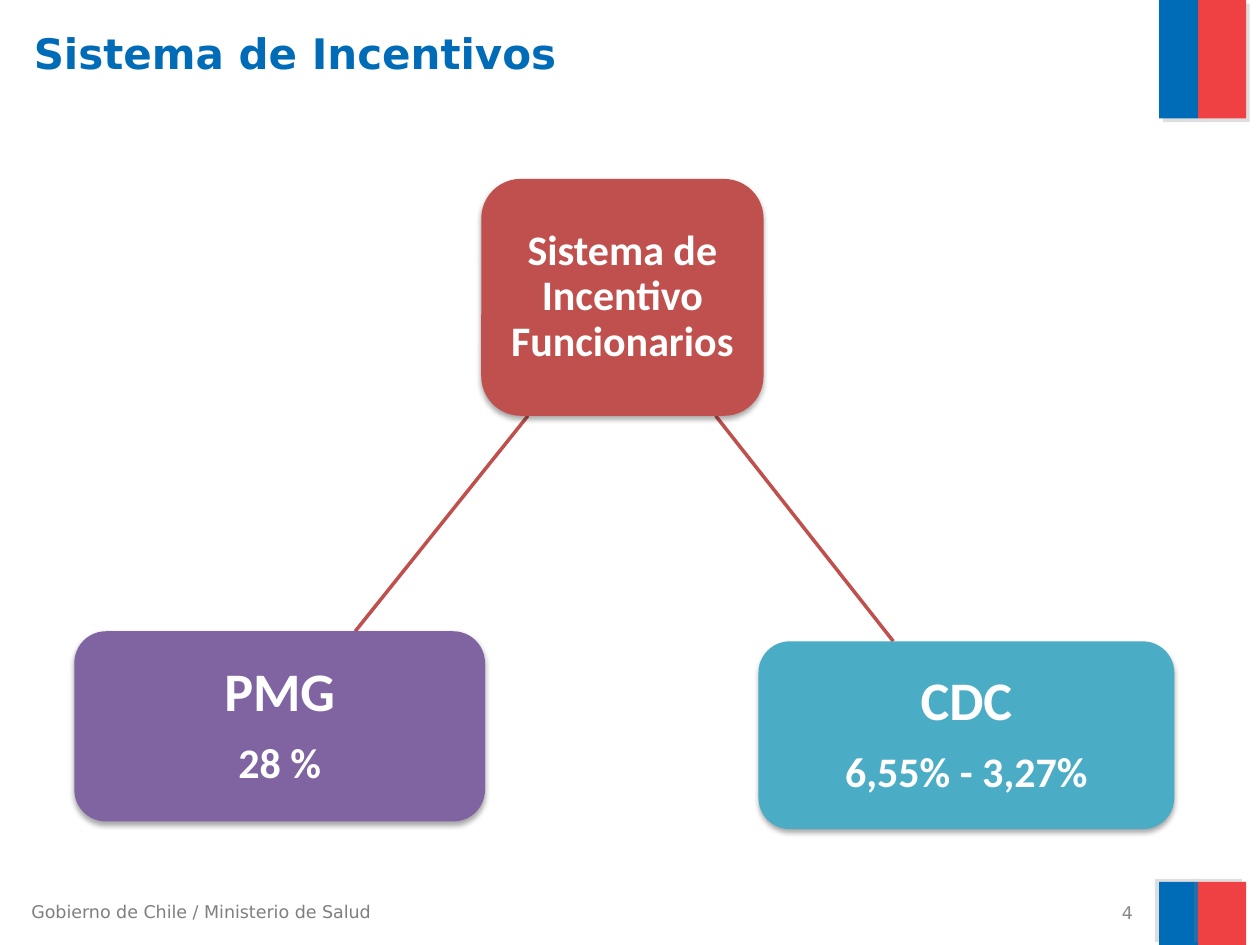
from dataclasses import dataclass

from lxml import etree
from pptx import Presentation
from pptx.dml.color import RGBColor
from pptx.enum.shapes import MSO_CONNECTOR, MSO_SHAPE
from pptx.enum.text import MSO_ANCHOR, PP_ALIGN
from pptx.oxml.ns import qn
from pptx.util import Emu, Pt

PX = 9144  # EMU per px, 100 px to the inch
RECT, ROUNDED = MSO_SHAPE.RECTANGLE, MSO_SHAPE.ROUNDED_RECTANGLE
STRAIGHT = MSO_CONNECTOR.STRAIGHT
TOP, MIDDLE = MSO_ANCHOR.TOP, MSO_ANCHOR.MIDDLE
LEFT, CENTER, RIGHT = PP_ALIGN.LEFT, PP_ALIGN.CENTER, PP_ALIGN.RIGHT

BLUE = RGBColor(0x00, 0x6C, 0xB7)
FLAG_RED = RGBColor(0xEF, 0x41, 0x44)
BRICK = RGBColor(0xC0, 0x50, 0x4D)
PURPLE = RGBColor(0x80, 0x64, 0xA2)
TEAL = RGBColor(0x4B, 0xAC, 0xC6)
WHITE = RGBColor(0xFF, 0xFF, 0xFF)
GRAY = RGBColor(0x7F, 0x7F, 0x7F)
PAGE_GRAY = RGBColor(0x89, 0x89, 0x89)


@dataclass(frozen=True)
class Shadow:
    color: str
    alpha: int
    blur: float
    dist: float
    angle: int


@dataclass(frozen=True)
class Box:
    x: int
    y: int
    w: int
    h: int

    def emu(self) -> list[Emu]:
        return [Emu(n * PX) for n in (self.x, self.y, self.w, self.h)]


@dataclass(frozen=True)
class Band:
    box: Box
    color: RGBColor
    shadow: Shadow


@dataclass(frozen=True)
class Node:
    box: Box
    color: RGBColor
    inset: int
    lines: tuple[tuple[str, int], ...]


@dataclass(frozen=True)
class Label:
    box: Box
    text: str
    size: int
    color: RGBColor
    bold: bool = False
    align: PP_ALIGN = LEFT
    anchor: MSO_ANCHOR = TOP


FLAG_TOP = Shadow("808080", 25, 0, 3, 45)
FLAG_BOTTOM = Shadow("808080", 25, 0, 3, 215)
NODE_SHADOW = Shadow("000000", 35, 3.1, 1.8, 90)

BANDS = [
    Band(Box(920, -1, 31, 95), BLUE, FLAG_TOP),
    Band(Box(951, 0, 38, 94), FLAG_RED, FLAG_TOP),
    Band(Box(920, 700, 31, 50), BLUE, FLAG_BOTTOM),
    Band(Box(951, 700, 38, 50), FLAG_RED, FLAG_BOTTOM),
]
LABELS = [
    Label(Box(15, 710, 302, 27), "Gobierno de Chile / Ministerio de Salud", 10, GRAY),
    Label(Box(17, 17, 893, 125), "Sistema de Incentivos", 24, BLUE, bold=True),
    Label(Box(676, 714, 233, 21), "4", 10, PAGE_GRAY, align=RIGHT, anchor=MIDDLE),
]
LINKS = [(568, 330, 709, 509), (419, 330, 282, 501)]
NODES = [
    Node(Box(382, 142, 224, 188), BRICK, 7,
         (("Sistema de Incentivo Funcionarios", 24),)),
    Node(Box(602, 509, 330, 149), TEAL, 9, (("CDC", 31), ("6,55% - 3,27%", 24))),
    Node(Box(59, 501, 326, 151), PURPLE, 9, (("PMG", 31), ("28 %", 24))),
]


def add_shadow(sp, shadow: Shadow) -> None:
    sp.shadow.inherit = False
    effects = sp._element.spPr.find(qn("a:effectLst"))
    outer = etree.SubElement(
        effects, qn("a:outerShdw"), blurRad=str(Pt(shadow.blur)),
        dist=str(Pt(shadow.dist)), dir=str(shadow.angle * 60000),
        algn="ctr", rotWithShape="0")
    color = etree.SubElement(outer, qn("a:srgbClr"), val=shadow.color)
    etree.SubElement(color, qn("a:alpha"), val=str(shadow.alpha * 1000))


def add_block(slide, kind, box: Box, color: RGBColor, shadow: Shadow):
    sp = slide.shapes.add_shape(kind, *box.emu())
    sp.fill.solid()
    sp.fill.fore_color.rgb = color
    sp.line.fill.background()
    add_shadow(sp, shadow)
    return sp


def style(p, font: str, size: int, color: RGBColor, bold: bool, align) -> None:
    p.alignment = align
    p.font.name = font
    p.font.size = Pt(size)
    p.font.bold = bold
    p.font.color.rgb = color


def add_label(slide, label: Label) -> None:
    tf = slide.shapes.add_textbox(*label.box.emu()).text_frame
    tf.word_wrap = True
    tf.vertical_anchor = label.anchor
    p = tf.paragraphs[0]
    p.text = label.text
    style(p, "DejaVu Sans", label.size, label.color, label.bold, label.align)


def add_link(slide, ends: tuple[int, int, int, int]) -> None:
    line = slide.shapes.add_connector(STRAIGHT, *(Emu(n * PX) for n in ends))
    line.line.color.rgb = BRICK
    line.line.width = Pt(2)
    etree.SubElement(line._element.spPr, qn("a:effectLst"))


def add_node(slide, node: Node) -> None:
    tf = add_block(slide, ROUNDED, node.box, node.color, NODE_SHADOW).text_frame
    tf.word_wrap = True
    tf.vertical_anchor = MIDDLE
    inset = Emu(node.inset * PX)
    tf.margin_left = tf.margin_right = tf.margin_top = tf.margin_bottom = inset
    for i, (text, size) in enumerate(node.lines):
        p = tf.add_paragraph() if i else tf.paragraphs[0]
        p.text = text
        p.line_spacing = 0.9
        p.space_after = Pt(round(size * 0.35))
        style(p, "Calibri", size, WHITE, True, CENTER)


def main() -> None:
    prs = Presentation()
    prs.slide_width, prs.slide_height = Emu(1000 * PX), Emu(750 * PX)
    slide = prs.slides.add_slide(prs.slide_layouts[6])

    # Flag bands at the right edge
    for band in BANDS:
        add_block(slide, RECT, band.box, band.color, band.shadow)

    # Footer, title and page number
    for label in LABELS:
        add_label(slide, label)

    # Diagram
    for ends in LINKS:
        add_link(slide, ends)
    for node in NODES:
        add_node(slide, node)

    prs.save("out.pptx")


if __name__ == "__main__":
    main()
